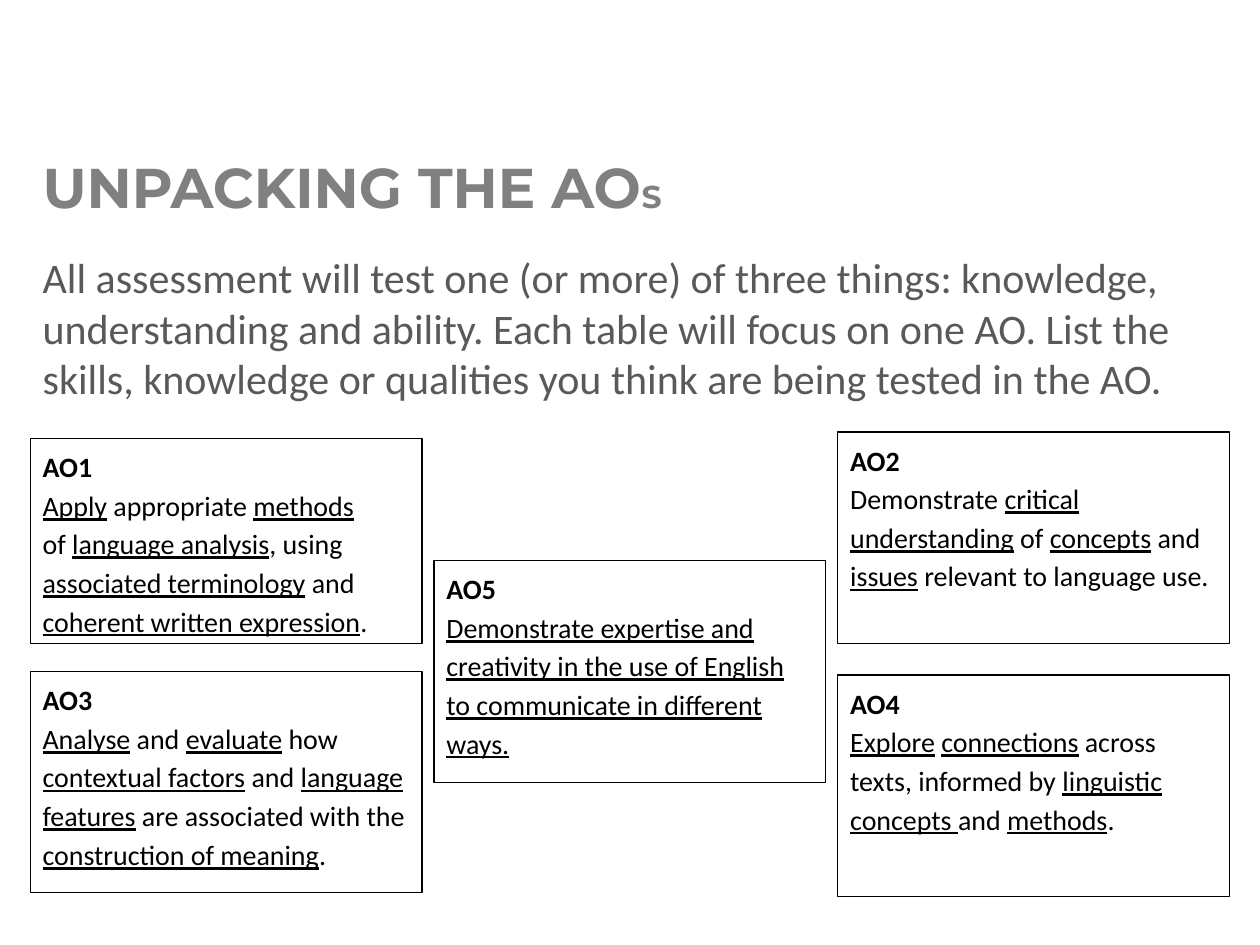
from pptx import Presentation, util as u
from pptx.dml.color import RGBColor
from pptx.enum import shapes, text

BLACK = RGBColor(0, 0, 0)
WHITE = RGBColor(255, 255, 255)
TITLE_GREY = RGBColor(0x80, 0x80, 0x80)
BODY_GREY = RGBColor(0x59, 0x59, 0x59)

LEFT, COLUMN_STEP, CARD_WIDTH = 0.61, 8.14, 7.9

# Column, top, height, heading, lines; underscores enclose underlined words.
OBJECTIVES = [
    (0, 8.84, 4.14, "AO1", ["_Apply_ appropriate _methods_ ",
                            "of _language analysis_, using",
                            "_associated terminology_ and",
                            "_coherent written expression_."]),
    (2, 8.71, 4.27, "AO2", ["Demonstrate _critical understanding_ of _concepts_ and "
                            "_issues_ relevant to language use."]),
    (0, 13.54, 4.45, "AO3", ["_Analyse_ and _evaluate_ how",
                             "_contextual factors_ and _language features_ are "
                             "associated with the _construction of meaning_."]),
    (2, 13.61, 4.47, "AO4", ["_Explore_ _connections_ across",
                             "texts, informed by _linguistic concepts _and _methods_."]),
    (1, 11.3, 4.47, "AO5", ["_Demonstrate expertise and creativity in the use of "
                            "English to communicate in different ways._"]),
]


class Page:
    TITLE = {"name": "Montserrat", "size": u.Pt(32), "bold": True}
    SMALL = {**TITLE, "size": u.Pt(18)}
    BODY = {"name": "Calibri", "size": u.Pt(24)}
    CARD = {"name": "Calibri", "size": u.Pt(16), "bold": False}
    HEADING = {**CARD, "bold": True}

    def __init__(self, slide):
        self.slide = slide

    def add_span(self, para, words, style, colour):
        span = para.add_run()
        span.text = words
        for key, value in style.items():
            setattr(span.font, key, value)
        span.font.color.rgb = colour

    def add_text(self, place, spans, colour, anchor):
        box = self.slide.shapes.add_textbox(*map(u.Cm, place))
        box.text_frame.word_wrap = True
        box.text_frame.vertical_anchor = anchor
        for words, style in spans:
            self.add_span(box.text_frame.paragraphs[0], words, style, colour)

    def add_card(self, column, top, height, heading, lines):
        place = (LEFT + column * COLUMN_STEP, top, CARD_WIDTH, height)
        box = self.slide.shapes.add_shape(shapes.MSO_SHAPE.RECTANGLE, *map(u.Cm, place))
        box.shadow.inherit = False
        box.fill.solid()
        box.fill.fore_color.rgb = WHITE
        box.line.color.rgb = BLACK
        box.line.width = u.Pt(0.75)
        frame = box.text_frame
        frame.word_wrap = True
        frame.vertical_anchor = text.MSO_ANCHOR.TOP
        self.add_span(frame.paragraphs[0], heading, self.HEADING, BLACK)
        for line in lines:
            para = frame.add_paragraph()
            for index, words in enumerate(line.split("_")):
                if words:
                    style = {**self.CARD, "underline": index % 2 == 1}
                    self.add_span(para, words, style, BLACK)
        for para in frame.paragraphs:
            para.alignment = text.PP_ALIGN.LEFT
            para.line_spacing = 1.15


def main():
    deck = Presentation()
    deck.slide_width, deck.slide_height = u.Cm(25.4), u.Cm(19.05)
    page = Page(deck.slides.add_slide(deck.slide_layouts[6]))
    page.add_text((LEFT, 4.95, 23.9, 3.33), [
        ("All assessment will test one (or more) of three things: knowledge, "
         "understanding and ability. Each table will focus on one AO. List the "
         "skills, knowledge or qualities you think are being tested in the AO.", Page.BODY),
    ], BODY_GREY, text.MSO_ANCHOR.TOP)
    page.add_text((LEFT, 2.54, 24.18, 2.41),
                  [("UNPACKING THE AO", Page.TITLE), ("S", Page.SMALL)],
                  TITLE_GREY, text.MSO_ANCHOR.MIDDLE)
    for objective in OBJECTIVES:
        page.add_card(*objective)
    deck.save("out.pptx")


if __name__ == "__main__":
    main()
